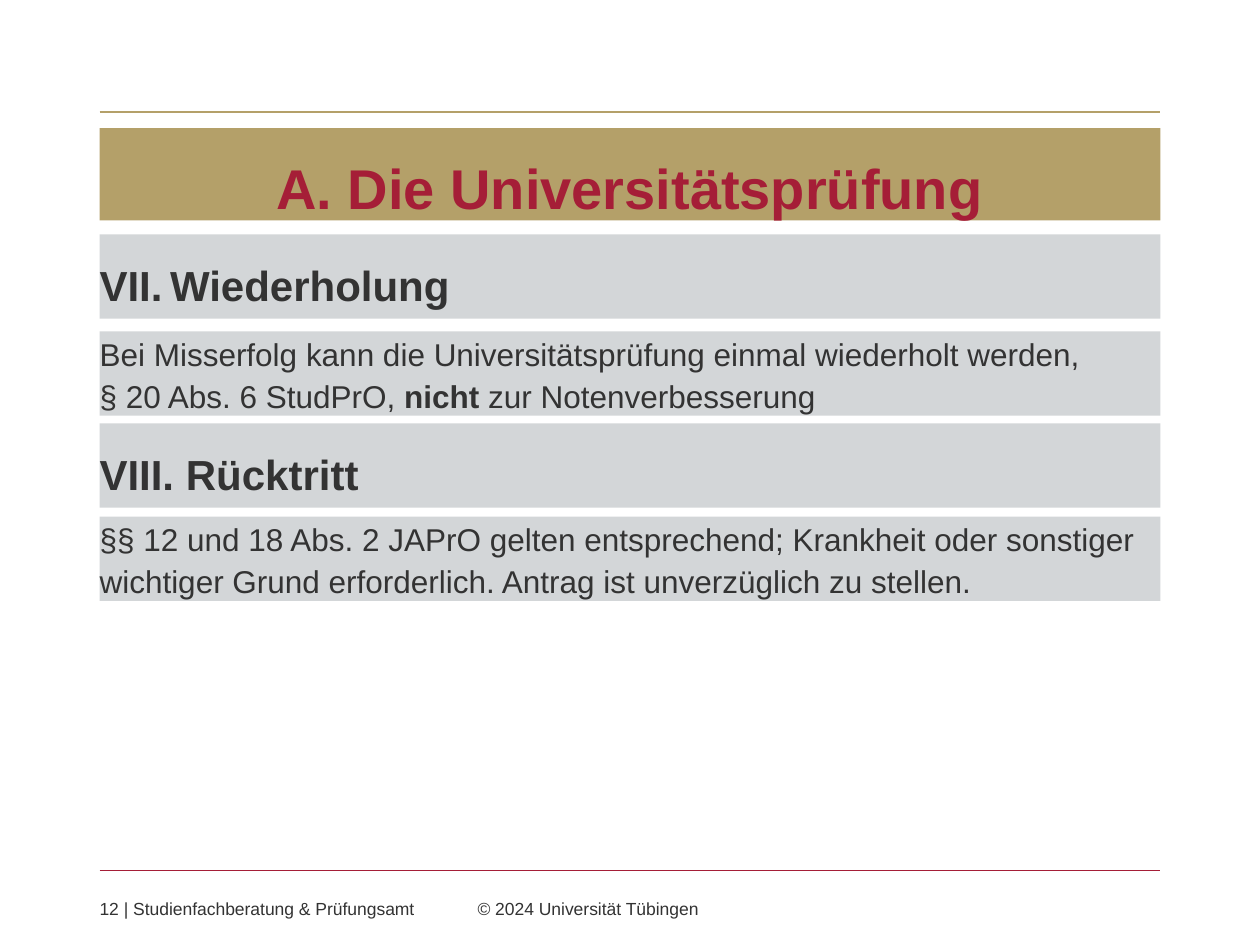
from lxml import etree
from pptx import Presentation
from pptx.dml.color import RGBColor
from pptx.enum.shapes import MSO_CONNECTOR, MSO_SHAPE
from pptx.enum.text import MSO_ANCHOR, MSO_AUTO_SIZE, PP_ALIGN
from pptx.oxml.ns import qn
from pptx.util import Inches, Pt

RECT = MSO_SHAPE.RECTANGLE
LINE = MSO_CONNECTOR.STRAIGHT
TOP, BOTTOM = MSO_ANCHOR.TOP, MSO_ANCHOR.BOTTOM
GROW = MSO_AUTO_SIZE.SHAPE_TO_FIT_TEXT
LEFT, CENTER = PP_ALIGN.LEFT, PP_ALIGN.CENTER
GOLD, RED, GREY, DARK = "B4A069", "A51E37", "D3D6D8", "333333"
EDGE, WIDTH = 0.79, 8.42


def color(code):
    return RGBColor.from_string(code)


def write(shape, runs, size, ink, align=LEFT, anchor=TOP, space=1.0):
    """Fill a shape without margins with (text, bold) runs; a line feed breaks the line."""
    frame = shape.text_frame
    frame.word_wrap = True
    frame.vertical_anchor = anchor
    frame.margin_left = frame.margin_right = 0
    frame.margin_top = frame.margin_bottom = 0
    para = frame.paragraphs[0]
    para.alignment = align
    para.line_spacing = space
    para.space_before = Pt(0)
    for text, bold in runs:
        for num, part in enumerate(text.split("\n")):
            if num:
                para.add_line_break()
            run = para.add_run()
            run.text = part
            run.font.name = "Arial"
            run.font.size = Pt(size)
            run.font.bold = bold
            run.font.color.rgb = color(ink)
    return para


prs = Presentation()
prs.slide_width, prs.slide_height = Inches(10), Inches(7.5)
slide = prs.slides.add_slide(prs.slide_layouts[5])
shapes = slide.shapes

# Rules above and below the content
for y, ink in [(0.89, GOLD), (6.91, RED)]:
    rule = shapes.add_connector(LINE, Inches(EDGE), Inches(y), Inches(EDGE + WIDTH), Inches(y))
    rule.line.color.rgb = color(ink)
    rule.line.width = Pt(0.75)
    etree.SubElement(rule._element.spPr, qn("a:effectLst"))

# Title
title = shapes.title
title.left, title.top = Inches(EDGE), Inches(1.04)
title.width, title.height = Inches(WIDTH), Inches(0.71)
title.fill.solid()
title.fill.fore_color.rgb = color(GOLD)
write(title, [("A. Die Universitätsprüfung", True)], 32, RED, CENTER, BOTTOM, 1.5)
title.text_frame.auto_size = GROW

# Numbered headings (with a start number) and their paragraphs
bands = [
    (1.86, 7, [("Wiederholung", True)]),
    (2.63, None, [
        ("Bei Misserfolg kann die Universitätsprüfung einmal wiederholt werden,\n"
         "§ 20 Abs. 6 StudPrO, ", False),
        ("nicht", True),
        (" zur Notenverbesserung", False)]),
    (3.36, 8, [(" Rücktritt", True)]),
    (4.1, None, [
        ("§§ 12 und 18 Abs. 2 JAPrO gelten entsprechend; Krankheit oder sonstiger "
         "wichtiger Grund erforderlich. Antrag ist unverzüglich zu stellen.", False)]),
]
for y, start, runs in bands:
    band = shapes.add_shape(RECT, Inches(EDGE), Inches(y), Inches(WIDTH), Inches(0.67))
    band.shadow.inherit = False
    band.fill.solid()
    band.fill.fore_color.rgb = color(GREY)
    band.line.fill.background()
    if start:
        para = write(band, runs, 24, DARK, space=1.5)
        props = para._p.get_or_add_pPr()
        props.set("marL", str(Inches(0.56)))
        props.set("indent", str(-Inches(0.56)))
        etree.SubElement(props, qn("a:buFont"), typeface="Arial")
        etree.SubElement(props, qn("a:buAutoNum"), type="romanUcPeriod", startAt=str(start))
        tabs = etree.SubElement(props, qn("a:tabLst"))
        etree.SubElement(tabs, qn("a:tab"), pos=str(Inches(0.49)), algn="l")
    else:
        para = write(band, runs, 18, DARK, space=1.1)
        para.space_after = Pt(6)

# Footer
foot = shapes.add_textbox(Inches(EDGE), Inches(7.13), Inches(WIDTH), Inches(0.17))
para = write(foot, [("12 | Studienfachberatung & Prüfungsamt\t© 2024 Universität Tübingen", False)],
             10, DARK)
foot.text_frame.auto_size = GROW
tabs = etree.SubElement(para._p.get_or_add_pPr(), qn("a:tabLst"))
etree.SubElement(tabs, qn("a:tab"), pos=str(Inches(3)), algn="l")

prs.save("out.pptx")
